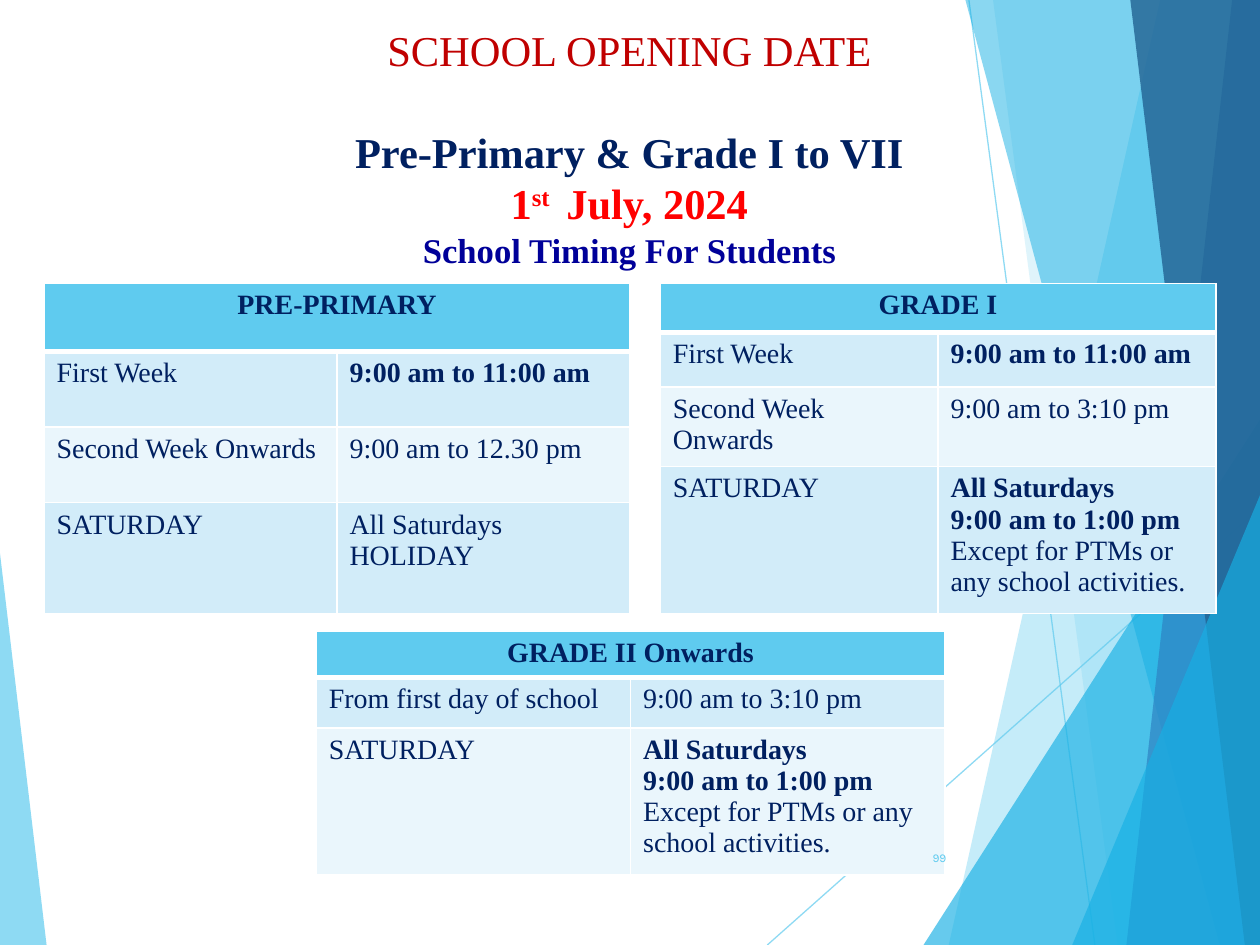
from dataclasses import dataclass
from typing import NamedTuple

from lxml import etree
from pptx import Presentation
from pptx import util as u
from pptx.dml.color import RGBColor
from pptx.enum import shapes, text
from pptx.oxml.ns import qn

SKY = RGBColor(0x5F, 0xCB, 0xEF)
CYAN = RGBColor(0x17, 0xB0, 0xE4)
BLUE = RGBColor(0x2E, 0x83, 0xC3)
DEEP_BLUE = RGBColor(0x22, 0x62, 0x92)
BAND_DARK = RGBColor(0xD2, 0xEC, 0xF9)
BAND_LIGHT = RGBColor(0xEA, 0xF6, 0xFC)
NAVY = RGBColor(0x00, 0x20, 0x60)
INDIGO = RGBColor(0x00, 0x00, 0x99)
DARK_RED = RGBColor(0xC0, 0x00, 0x00)
RED = RGBColor(0xFF, 0x00, 0x00)
SERIF = "Times New Roman"
WIDTH, HEIGHT, BLEED = 10, 7.5, -0.01


class Ray(NamedTuple):
    start: tuple[float, float]
    end: tuple[float, float]


class Panel(NamedTuple):
    """A facet reaching the right slide edge, with a slanted left side."""
    top_x: float
    bottom_x: float
    color: RGBColor
    opacity: int


class Triangle(NamedTuple):
    left: float
    top: float
    width: float
    apex: float
    color: RGBColor
    opacity: int


class Run(NamedTuple):
    text: str
    bold: bool = False
    color: RGBColor = NAVY
    size: float = 16
    font: str = SERIF
    superscript: bool = False


class TitleLine(NamedTuple):
    runs: list[Run]
    spacing: float
    before: float = 0


@dataclass
class Timetable:
    heading: str
    left: float
    top: float
    width: float
    heights: list[float]
    rows: list[tuple[str, list[Run]]]


RAYS = [Ray((7.69, 0), (8.69, 7.5)), Ray((10, 4.03), (6.09, 7.5))]
FACETS = [
    Panel(9.21, 7.53, SKY, 36),
    Panel(7.88, 8.87, SKY, 20),
    Triangle(7.33, 3.33, 2.67, 1, CYAN, 66),
    Panel(7.66, 9.68, CYAN, 50),
    Panel(9.78, 8.94, BLUE, 70),
    Panel(8.97, 9.88, DEEP_BLUE, 80),
    Triangle(8.51, 3.93, 1.49, 1, CYAN, 66),
    Triangle(0, 4.39, 0.37, 0, SKY, 70),
]
TITLE = [
    TitleLine([Run("SCHOOL OPENING DATE", False, DARK_RED, 24.3)], 29.1),
    TitleLine([Run("Pre-Primary & Grade I to VII", True, NAVY, 24.3)], 29.1, 29.1),
    TitleLine([
        Run("1", True, RED, 24.3),
        Run("st ", True, RED, 24.3, superscript=True),
        Run(" July, 2024", True, RED, 24.3),
    ], 29.1),
    TitleLine([Run("School Timing For Students", True, INDIGO, 19.8)], 24.2),
]
SATURDAY_CLASSES = [
    Run("All Saturdays", True),
    Run("9:00 am to 1:00 pm", True),
    Run("Except for PTMs or any school activities."),
]
FIRST_WEEK = ("First Week", [Run("9:00 am to 11:00 am", True)])
FULL_DAY = [Run("9:00 am to 3:10 pm")]
TIMETABLES = [
    Timetable("PRE-PRIMARY", 0.35, 2.25, 4.65, [0.54, 0.6, 0.6, 0.88], [
        FIRST_WEEK,
        ("Second Week Onwards", [Run("9:00 am to 12.30 pm")]),
        ("SATURDAY", [Run("All Saturdays HOLIDAY")]),
    ]),
    Timetable("GRADE II Onwards", 2.51, 5.01, 4.99, [0.35, 0.4, 1.09], [
        ("From first day of school", FULL_DAY),
        ("SATURDAY", SATURDAY_CLASSES),
    ]),
    Timetable("GRADE I", 5.24, 2.25, 4.41, [0.39, 0.43, 0.59, 1.09], [
        FIRST_WEEK,
        ("Second Week Onwards", FULL_DAY),
        ("SATURDAY", SATURDAY_CLASSES),
    ]),
]


def set_opacity(fill_parent, percent: int) -> None:
    color = next(fill_parent.iter(qn("a:srgbClr")))
    etree.SubElement(color, qn("a:alpha")).set("val", str(percent * 1000))


def draw_ray(slide, ray: Ray) -> None:
    points = [u.Inches(value) for value in ray.start + ray.end]
    line = slide.shapes.add_connector(shapes.MSO_CONNECTOR.STRAIGHT, *points)
    line.line.color.rgb = SKY
    line.line.width = u.Pt(0.75)
    properties = line._element.spPr
    set_opacity(properties, 70)
    etree.SubElement(properties, qn("a:effectLst"))


def draw_facet(slide, facet: Panel | Triangle) -> None:
    if isinstance(facet, Panel):
        corners = [(facet.top_x, BLEED), (WIDTH, BLEED), (WIDTH, HEIGHT), (facet.bottom_x, HEIGHT)]
        points = [(u.Inches(x), u.Inches(y)) for x, y in corners]
        builder = slide.shapes.build_freeform(*points[0])
        builder.add_line_segments(points[1:], close=True)
        shape = builder.convert_to_shape()
    else:
        shape = slide.shapes.add_shape(
            shapes.MSO_SHAPE.ISOSCELES_TRIANGLE, u.Inches(facet.left), u.Inches(facet.top),
            u.Inches(facet.width), u.Inches(HEIGHT - facet.top))
        shape.adjustments[0] = facet.apex
    shape.shadow.inherit = False
    shape.fill.solid()
    shape.fill.fore_color.rgb = facet.color
    shape.line.fill.background()
    set_opacity(shape._element.spPr, facet.opacity)


def add_run(paragraph, content: Run) -> None:
    run = paragraph.add_run()
    run.text = content.text
    run.font.name = content.font
    run.font.size = u.Pt(content.size)
    run.font.bold = content.bold
    run.font.color.rgb = content.color
    if content.superscript:
        run.font._element.set("baseline", "30000")


def add_text_frame(slide, left: float, top: float, width: float, height: float):
    box = slide.shapes.add_textbox(*(u.Inches(value) for value in (left, top, width, height)))
    box.text_frame.word_wrap = True
    return box.text_frame


def draw_title(slide) -> None:
    frame = add_text_frame(slide, 1.62, 0.14, 6.75, 2.05)
    for index, line in enumerate(TITLE):
        paragraph = frame.add_paragraph() if index else frame.paragraphs[0]
        paragraph.alignment = text.PP_ALIGN.CENTER
        paragraph.line_spacing = u.Pt(line.spacing)
        paragraph.space_before = u.Pt(line.before)
        for run in line.runs:
            add_run(paragraph, run)


def fill_cell(cell, lines: list[Run], color: RGBColor, bottom: int = 1, top: int = 1) -> None:
    """Write one paragraph per line and give the cell white borders."""
    properties = cell._tc.get_or_add_tcPr()
    for side, points in (("L", 1), ("R", 1), ("T", top), ("B", bottom)):
        border = etree.SubElement(properties, qn(f"a:ln{side}"), w=str(u.Pt(points)))
        solid = etree.SubElement(border, qn("a:solidFill"))
        etree.SubElement(solid, qn("a:srgbClr"), val="FFFFFF")
    cell.fill.solid()
    cell.fill.fore_color.rgb = color
    for index, line in enumerate(lines):
        paragraph = cell.text_frame.add_paragraph() if index else cell.text_frame.paragraphs[0]
        add_run(paragraph, line)


def draw_timetable(slide, timetable: Timetable) -> None:
    table = slide.shapes.add_table(
        len(timetable.heights), 2, u.Inches(timetable.left), u.Inches(timetable.top),
        u.Inches(timetable.width), u.Inches(sum(timetable.heights))).table
    for row, height in zip(table.rows, timetable.heights):
        row.height = u.Inches(height)
    heading = table.cell(0, 0)
    heading.merge(table.cell(0, 1))
    fill_cell(heading, [Run(timetable.heading, True)], SKY, bottom=3)
    fill_cell(table.cell(0, 1), [], SKY, bottom=3)
    heading.text_frame.paragraphs[0].alignment = text.PP_ALIGN.CENTER
    for index, (label, times) in enumerate(timetable.rows, start=1):
        color = BAND_DARK if index % 2 else BAND_LIGHT
        for column, lines in enumerate(([Run(label)], times)):
            fill_cell(table.cell(index, column), lines, color, top=3 if index == 1 else 1)


def draw_page_number(slide) -> None:
    frame = add_text_frame(slide, 7.05, 6.61, 0.56, 0.4)
    frame.vertical_anchor = text.MSO_ANCHOR.MIDDLE
    frame.paragraphs[0].alignment = text.PP_ALIGN.RIGHT
    add_run(frame.paragraphs[0], Run("99", color=SKY, size=6.8, font="Karla"))


def main() -> None:
    presentation = Presentation()
    presentation.slide_width, presentation.slide_height = u.Inches(WIDTH), u.Inches(HEIGHT)
    slide = presentation.slides.add_slide(presentation.slide_layouts[6])
    for ray in RAYS:
        draw_ray(slide, ray)
    for facet in FACETS:
        draw_facet(slide, facet)
    draw_title(slide)
    for timetable in TIMETABLES:
        draw_timetable(slide, timetable)
    draw_page_number(slide)
    presentation.save("out.pptx")


if __name__ == "__main__":
    main()
